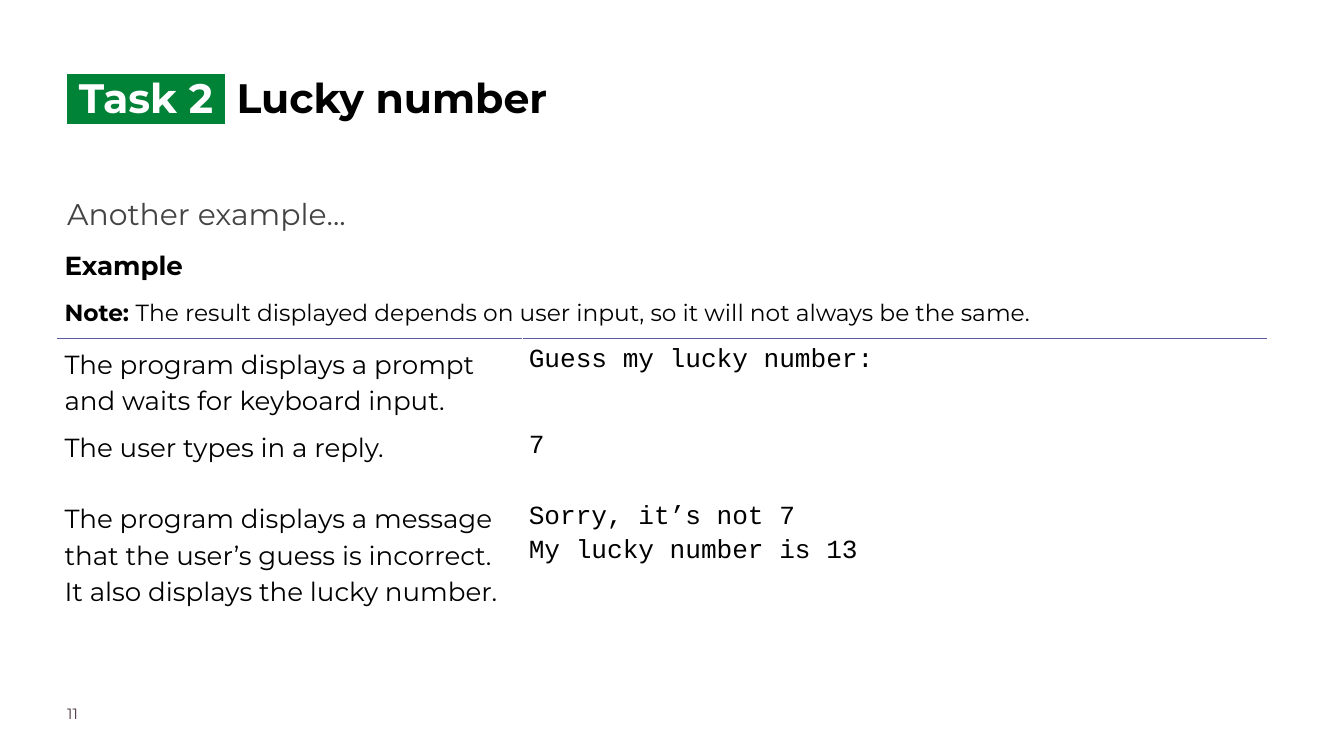
from lxml import etree
from pptx import Presentation
from pptx.dml.color import RGBColor
from pptx.enum.text import MSO_ANCHOR
from pptx.oxml.ns import qn
from pptx.util import Inches, Pt

BLACK = RGBColor(0x00, 0x00, 0x00)
WHITE = RGBColor(0xFF, 0xFF, 0xFF)
GREEN = RGBColor(0x00, 0x82, 0x37)
GREY = RGBColor(0x43, 0x43, 0x43)
BROWN = RGBColor(0x4B, 0x32, 0x41)
PURPLE = RGBColor(0x5B, 0x5B, 0xA5)
SANS = "Montserrat"
MONO = "Courier New"


def add_run(p, text, size, color=BLACK, bold=False, font=SANS):
    r = p.add_run()
    r.text = text
    r.font.size = Pt(size)
    r.font.bold = bold
    r.font.name = font
    r.font.color.rgb = color
    return r


def highlight(r, color):
    mark = etree.Element(qn("a:highlight"))
    etree.SubElement(mark, qn("a:srgbClr"), val=str(color))
    r.font._element.find(qn("a:solidFill")).addnext(mark)


def add_text_box(s, left, top, width, height, spacing=1.0):
    tf = s.shapes.add_textbox(Inches(left), Inches(top), Inches(width), Inches(height)).text_frame
    tf.word_wrap = True
    tf.margin_left = tf.margin_top = tf.margin_right = tf.margin_bottom = 0
    p = tf.paragraphs[0]
    p.line_spacing = spacing
    return p


def add_title(s, left, top, width, height):
    p = add_text_box(s, left, top, width, height, 1.15)
    highlight(add_run(p, " Task 2 ", 44, WHITE, True), GREEN)
    add_run(p, " Lucky number", 44, BLACK, True)


def add_intro(s, left, top, width, height):
    p = add_text_box(s, left, top, width, height, 1.3)
    p.space_after = Pt(20)
    add_run(p, "Another example...", 32, GREY)


def add_page_number(s, left, top, width, height):
    add_run(add_text_box(s, left, top, width, height), "11", 16, BROWN)


def set_borders(cell, top, bottom):
    tc_pr = cell._tc.get_or_add_tcPr()
    for side, color in (("L", WHITE), ("R", WHITE), ("T", top), ("B", bottom)):
        ln = etree.SubElement(tc_pr, qn(f"a:ln{side}"), w=str(Pt(1)))
        fill = etree.SubElement(ln, qn("a:solidFill"))
        etree.SubElement(fill, qn("a:srgbClr"), val=str(color))


def fill_cell(cell, lines, font=SANS, spacing=1.15):
    tf = cell.text_frame
    for i, line in enumerate(lines):
        p = tf.add_paragraph() if i else tf.paragraphs[0]
        p.line_spacing = spacing
        add_run(p, line, 28, font=font)


def add_example_table(s, left, top, col_widths, row_heights):
    steps = [
        ("The program displays a prompt and waits for keyboard input.",
         ["Guess my lucky number:"]),
        ("The user types in a reply.", ["7"]),
        ("The program displays a message that the user’s guess is incorrect. "
         "It also displays the lucky number.",
         ["Sorry, it’s not 7", "My lucky number is 13"]),
    ]
    table = s.shapes.add_table(
        len(row_heights), len(col_widths), Inches(left), Inches(top),
        Inches(sum(col_widths)), Inches(sum(row_heights))).table
    table.first_row = table.horz_banding = False
    for col, width in zip(table.columns, col_widths):
        col.width = Inches(width)
    for i, (row, height) in enumerate(zip(table.rows, row_heights)):
        row.height = Inches(height)
        for cell in row.cells:
            set_borders(cell, PURPLE if i == 2 else WHITE, PURPLE if i == 1 else WHITE)
            cell.fill.background()
            cell.margin_left = cell.margin_right = Inches(0.1)
            cell.margin_top = cell.margin_bottom = Inches(0 if i < 2 else 0.04)
            cell.vertical_anchor = MSO_ANCHOR.MIDDLE if i < 2 else MSO_ANCHOR.TOP
    table.cell(2, 0).margin_top = Inches(0.08)
    table.cell(1, 0).merge(table.cell(1, 1))

    heading, note = (table.cell(i, 0).text_frame.paragraphs[0] for i in range(2))
    heading.line_spacing = note.line_spacing = 1.14
    add_run(heading, "Example", 28, bold=True)
    add_run(note, "Note: ", 25, bold=True)
    add_run(note, "The result displayed depends on user input, "
                  "so it will not always be the same.", 25)
    for i, (step, output) in enumerate(steps, start=2):
        fill_cell(table.cell(i, 0), [step])
        fill_cell(table.cell(i, 1), output, MONO)


def main():
    prs = Presentation()
    prs.slide_width = Inches(20)
    prs.slide_height = Inches(11.25)
    s = prs.slides.add_slide(prs.slide_layouts[6])
    add_title(s, 1, 0.97, 14.44, 1.78)
    add_intro(s, 1, 2.75, 17.99, 0.8)
    add_page_number(s, 1, 10.48, 1.57, 0.39)
    add_example_table(s, 0.86, 3.63, [6.91, 11.08], [0.6, 0.81, 1.28, 1.06, 1.06])
    prs.save("out.pptx")


if __name__ == "__main__":
    main()
